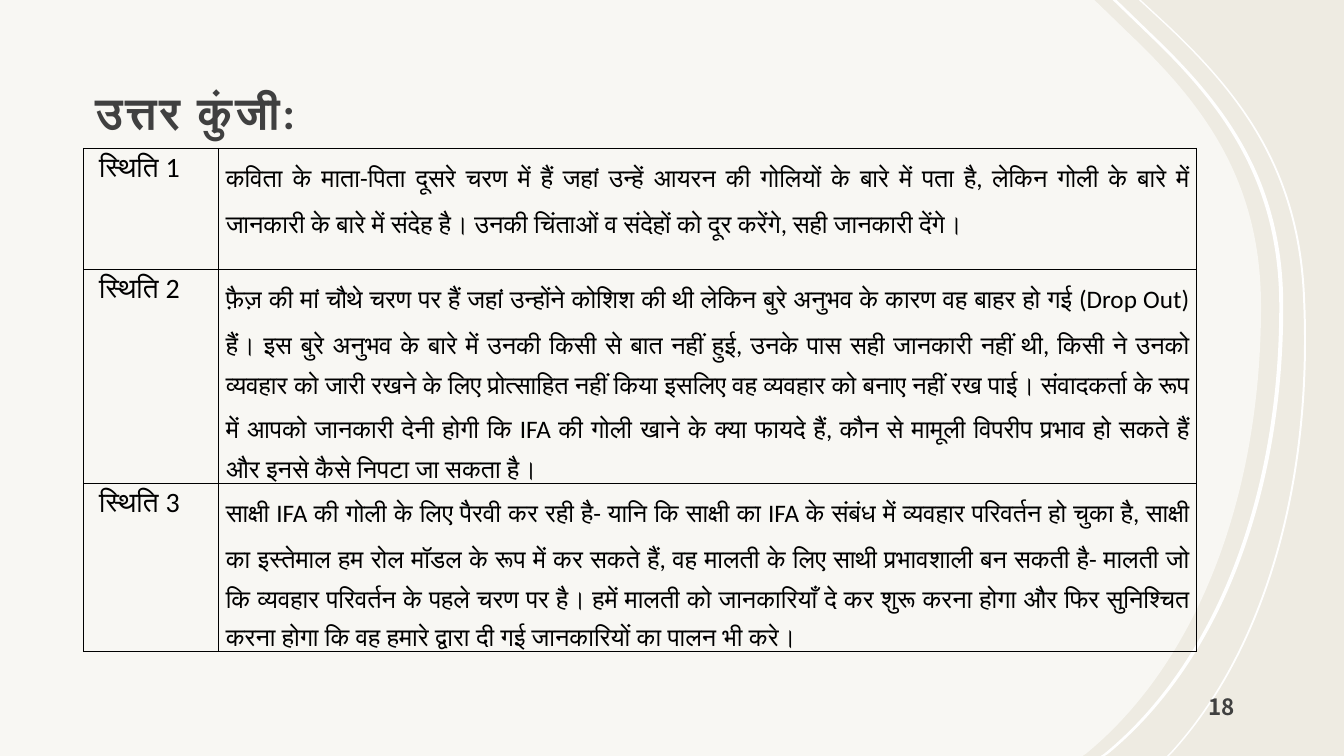
"""Build the answer key slide: three situations in a table beside curved bands."""
from lxml import etree
from pptx import Presentation
from pptx import util as u
from pptx.dml.color import RGBColor
from pptx.enum import text
from pptx.oxml import parse_xml
from pptx.oxml.ns import qn

COLOURS = {"ground": "EEEBE2", "white": "FFFFFF", "heading": "404040", "ink": "000000"}
SLIDE_HEIGHT = 19.05
DRAWING_NS = "http://schemas.openxmlformats.org/drawingml/2006/main"

BEZIER_HANDLES = (2, 3, 5, 6)
INNER_EDGE = [
    (27.58, 0), (28.5, 0.89),
    (30.33, 2.64), (31.78, 4.55), (31.78, 7.72),
    (31.78, 12.5), (30.18, 16.69), (27.36, 19),
    (27.28, SLIDE_HEIGHT),
]
OUTER_EDGE = [
    (28.7, 0), (29.36, 0.61),
    (31.22, 2.36), (32.72, 4.27), (32.84, 7.54),
    (33.05, 12.19), (31.85, 16.38), (29.49, 18.97),
    (29.41, SLIDE_HEIGHT),
]
ANSWERS = [
    ("स्थिति 1", 3.05,
     "कविता के माता-पिता दूसरे चरण में हैं जहां उन्हें आयरन की गोलियों के बारे में पता है, "
     "लेकिन गोली के बारे में जानकारी के बारे में संदेह है। उनकी चिंताओं व संदेहों को दूर करेंगे, "
     "सही जानकारी देंगे।"),
    ("स्थिति 2", 4.45,
     "फ़ैज़ की मां चौथे चरण पर हैं जहां उन्होंने कोशिश की थी लेकिन बुरे अनुभव के कारण वह बाहर हो गई "
     "(Drop Out) हैं। इस बुरे अनुभव के बारे में उनकी किसी से बात नहीं हुई, उनके पास सही जानकारी नहीं थी, "
     "किसी ने उनको व्यवहार को जारी रखने के लिए प्रोत्साहित नहीं किया इसलिए वह व्यवहार को बनाए नहीं रख पाई। "
     "संवादकर्ता के रूप में आपको जानकारी देनी होगी कि IFA की गोली खाने के क्या फायदे हैं, "
     "कौन से मामूली विपरीप प्रभाव हो सकते हैं और इनसे कैसे निपटा जा सकता है।"),
    ("स्थिति 3", 3.96,
     "साक्षी IFA की गोली के लिए पैरवी कर रही है- यानि कि साक्षी का IFA के संबंध में व्यवहार परिवर्तन "
     "हो चुका है, साक्षी का इस्तेमाल हम रोल मॉडल के रूप में कर सकते हैं, वह मालती के लिए साथी प्रभावशाली "
     "बन सकती है- मालती जो कि व्यवहार परिवर्तन के पहले चरण पर है। हमें मालती को जानकारियाँ दे कर शुरू "
     "करना होगा और फिर सुनिश्चित करना होगा कि वह हमारे द्वारा दी गई जानकारियों का पालन भी करे।"),
]


def add_curve(shapes, sides):
    """Add a white outline made of edges, each bent by its Bézier handles."""
    stops, handles = [], {}
    for side in sides:
        for index, (x, y) in enumerate(side):
            point = (u.Cm(x), u.Cm(y))
            if index in BEZIER_HANDLES:
                handles.setdefault(len(stops), []).append(point)
            else:
                stops.append(point)
    builder = shapes.build_freeform(*stops[0])
    builder.add_line_segments(stops[1:], close=True)
    curve = builder.convert_to_shape()
    lines = list(curve._element.iter(qn("a:lnTo")))
    for stop, pair in handles.items():
        segment = lines[stop - 1]
        bend = etree.Element(qn("a:cubicBezTo"))
        for x, y in pair:
            etree.SubElement(bend, qn("a:pt"), x=str(x - curve.left), y=str(y - curve.top))
        bend.append(segment[0])
        segment.getparent().replace(segment, bend)
    curve.shadow.inherit = False
    curve.fill.solid()
    curve.fill.fore_color.rgb = RGBColor.from_string(COLOURS["white"])
    curve.line.fill.background()
    return curve


def add_run(paragraph, words, size, colour, font="Calibri", bold=False):
    """Add one formatted run to a paragraph and return it."""
    run = paragraph.add_run()
    run.text = words
    run.font.size = u.Pt(size)
    run.font.name = font
    run.font.bold = bold
    run.font.color.rgb = RGBColor.from_string(COLOURS[colour])
    return run


deck = Presentation()
deck.slide_width, deck.slide_height = u.Cm(33.87), u.Cm(SLIDE_HEIGHT)
slide = deck.slides.add_slide(deck.slide_layouts[5])
slide.background.fill.solid()
slide.background.fill.fore_color.rgb = RGBColor.from_string(COLOURS["ground"])

panel = add_curve(slide.shapes, [INNER_EDGE, [(0, SLIDE_HEIGHT), (0, 0)]])
panel_colour = panel._element.spPr.find(qn("a:solidFill"))[0]
etree.SubElement(panel_colour, qn("a:alpha")).set("val", "60000")
slide.shapes._spTree.insert(2, panel._element)

for edge, start, width in ((OUTER_EDGE, 0, 0.05), (INNER_EDGE, 0.46, 0.1)):
    left_side = [(x + start, y) for x, y in edge]
    right_side = [(x + width, y) for x, y in left_side]
    add_curve(slide.shapes, [left_side, right_side[::-1]])

heading = slide.shapes.title
heading.left, heading.top, heading.width, heading.height = u.Cm(2.11), u.Cm(0), u.Cm(21.72), u.Cm(3.73)
page_number = slide.shapes.add_textbox(u.Cm(30.15), u.Cm(17.13), u.Cm(3.3), u.Cm(1.27))
for holder in (heading, page_number):
    frame = holder.text_frame
    frame.word_wrap = True
    frame.auto_size = text.MSO_AUTO_SIZE.NONE
    frame.vertical_anchor = text.MSO_ANCHOR.BOTTOM
    frame.margin_left = frame.margin_top = frame.margin_right = u.Cm(0.3)
    frame.margin_bottom = u.Cm(0.25)
    frame.paragraphs[0].alignment = text.PP_ALIGN.LEFT

heading_line = heading.text_frame.paragraphs[0]
heading_line.line_spacing = 1.3
heading_run = add_run(heading_line, "उत्तर कुंजी:", 32, "heading", bold=True)
heading_run.font._element.set("spc", "150")
number_line = page_number.text_frame.paragraphs[0]
number_line.space_after = u.Pt(6)
add_run(number_line, "18", 16, "heading", "Noto Sans CJK JP", True)

answer_key = slide.shapes.add_table(
    len(ANSWERS), 2, u.Cm(2.11), u.Cm(3.74), u.Cm(28.04), u.Cm(11.46)).table
answer_key.first_row = answer_key.horz_banding = False
answer_key.columns[0].width, answer_key.columns[1].width = u.Cm(3.4), u.Cm(24.64)
for row, (situation, height, answer) in zip(answer_key.rows, ANSWERS):
    row.height = u.Cm(height)
    for cell, words, size, spacing in zip(row.cells, (situation, answer), (20, 18), (1.06, 1.5)):
        cell.margin_left = cell.margin_right = u.Cm(0.18)
        cell.margin_top = cell.margin_bottom = 0
        line = cell.text_frame.paragraphs[0]
        line.alignment = text.PP_ALIGN.JUSTIFY
        line.line_spacing = spacing
        if words == situation:
            line._p.get_or_add_pPr().set("indent", str(u.Cm(0.21)))
        add_run(line, words, size, "ink")
        cell_format = cell._tc.get_or_add_tcPr()
        for side in ("lnL", "lnR", "lnT", "lnB"):
            cell_format.append(parse_xml(
                f'<a:{side} xmlns:a="{DRAWING_NS}" w="{u.Pt(1)}"><a:solidFill>'
                f'<a:srgbClr val="{COLOURS["ink"]}"/></a:solidFill></a:{side}>'))
        cell.fill.background()

deck.save("out.pptx")
